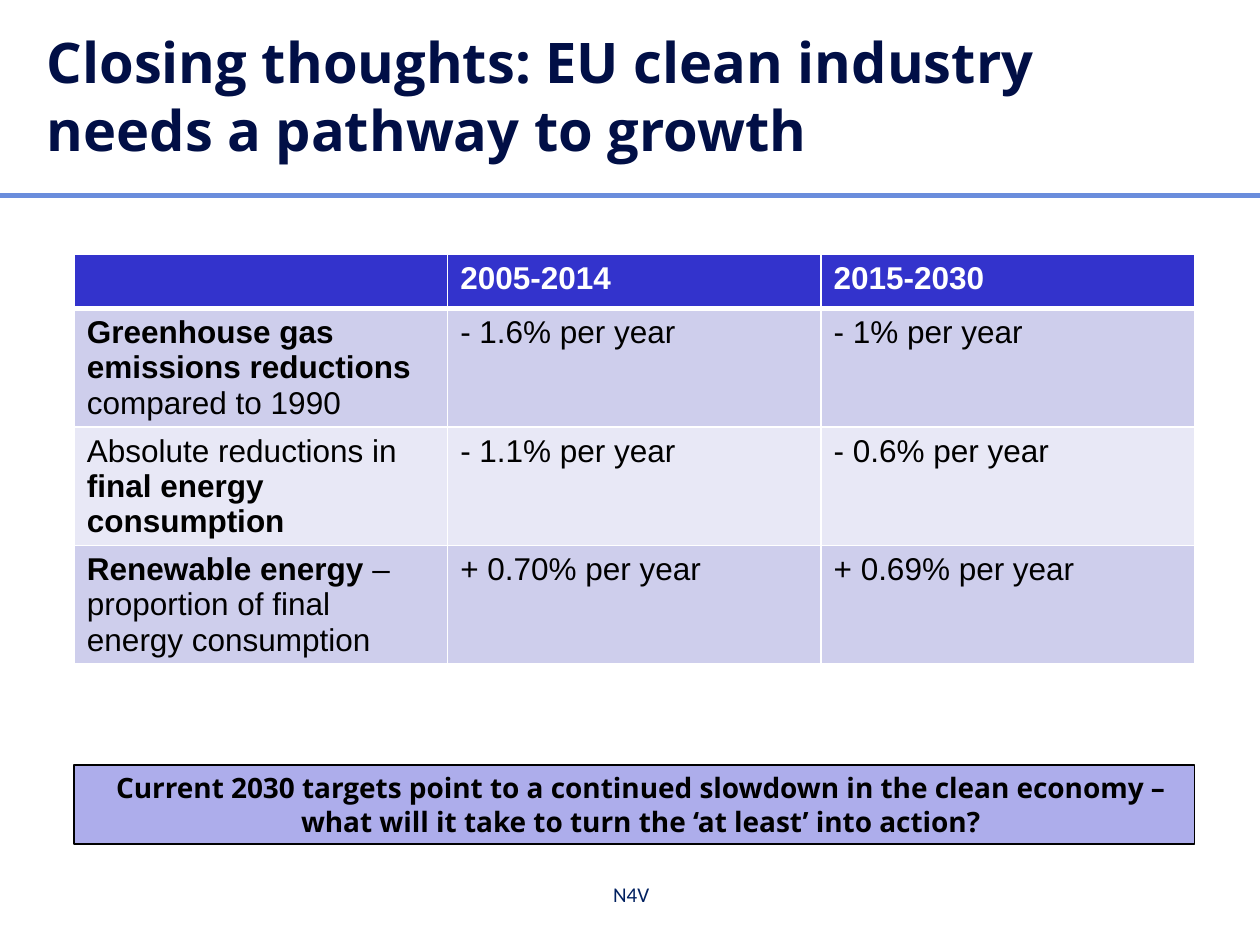
from dataclasses import dataclass

from lxml import etree
from pptx import Presentation
from pptx.dml.color import RGBColor
from pptx.enum.shapes import MSO_CONNECTOR, MSO_SHAPE
from pptx.enum.text import MSO_ANCHOR, MSO_AUTO_SIZE, PP_ALIGN
from pptx.oxml.ns import qn
from pptx.util import Inches, Pt

RECTANGLE = MSO_SHAPE.RECTANGLE
STRAIGHT = MSO_CONNECTOR.STRAIGHT
MIDDLE = MSO_ANCHOR.MIDDLE
LEFT, CENTER = PP_ALIGN.LEFT, PP_ALIGN.CENTER
NO_FIT = MSO_AUTO_SIZE.NONE
TITLE_ONLY = 5


@dataclass(frozen=True)
class Theme:
    heading_font: str = "Open Sans"
    table_font: str = "Arial"
    footer_font: str = "Calibri"
    title_size: int = 32
    table_size: int = 18
    callout_size: int = 16
    footer_size: int = 12
    title: str = "010F46"
    footer: str = "002060"
    rule: str = "6A8DDC"
    header: str = "3333CC"
    bands: tuple = ("CECEEC", "E8E8F6")
    callout: str = "ADADEB"
    dark: str = "000000"
    light: str = "FFFFFF"


class SlideBuilder:
    def __init__(self, slide, theme):
        self.slide = slide
        self.theme = theme

    def paint(self, fill, color):
        fill.solid()
        fill.fore_color.rgb = RGBColor.from_string(color)

    def set_text(self, frame, runs, font, size, color, bold=None, align=LEFT):
        frame.word_wrap = True
        paragraph = frame.paragraphs[0]
        paragraph.alignment = align
        paragraph.font.name = font
        paragraph.font.size = Pt(size)
        paragraph.font.bold = bold
        paragraph.font.color.rgb = RGBColor.from_string(color)
        for text, run_bold in runs:
            run = paragraph.add_run()
            run.text = text
            if run_bold != bold:
                run.font.bold = run_bold
        return paragraph

    def title(self, text, box):
        heading = self.slide.shapes.title
        heading.left, heading.top, heading.width, heading.height = map(Inches, box)
        frame = heading.text_frame
        frame.auto_size = NO_FIT
        frame.vertical_anchor = MIDDLE
        paragraph = self.set_text(frame, [(text, True)], self.theme.heading_font,
                                  self.theme.title_size, self.theme.title, True)
        paragraph.line_spacing = 1.01

    def rule(self, y, width, weight):
        divider = self.slide.shapes.add_connector(
            STRAIGHT, Inches(0), Inches(y), Inches(width), Inches(y))
        divider.line.color.rgb = RGBColor.from_string(self.theme.rule)
        divider.line.width = Pt(weight)
        etree.SubElement(divider._element.spPr, qn("a:effectLst"))

    def cell_borders(self, cell, top, bottom):
        properties = cell._tc.get_or_add_tcPr()
        weights = {"lnL": 1, "lnR": 1, "lnT": top, "lnB": bottom}
        for position, (side, weight) in enumerate(weights.items()):
            border = etree.Element(qn(f"a:{side}"), w=str(Pt(weight)))
            solid = etree.SubElement(border, qn("a:solidFill"))
            etree.SubElement(solid, qn("a:srgbClr"), val=self.theme.light)
            properties.insert(position, border)

    def table(self, rows, box, header_height, row_height):
        theme = self.theme
        grid = self.slide.shapes.add_table(
            len(rows), len(rows[0]), *map(Inches, box)).table
        for r, row in enumerate(rows):
            is_header = r == 0
            grid.rows[r].height = Inches(header_height if is_header else row_height)
            background = theme.header if is_header else theme.bands[(r - 1) % 2]
            color = theme.light if is_header else theme.dark
            for c, runs in enumerate(row):
                cell = grid.cell(r, c)
                self.paint(cell.fill, background)
                self.cell_borders(cell, 3 if r == 1 else 1, 3 if is_header else 1)
                agreed = runs[0][1] if len(runs) == 1 else None
                self.set_text(cell.text_frame, runs, theme.table_font,
                              theme.table_size, color, agreed)

    def callout(self, text, box):
        panel = self.slide.shapes.add_shape(RECTANGLE, *map(Inches, box))
        panel.shadow.inherit = False
        self.paint(panel.fill, self.theme.callout)
        panel.line.color.rgb = RGBColor.from_string(self.theme.dark)
        panel.line.width = Pt(1)
        frame = panel.text_frame
        frame.margin_left = Inches(0.2)
        frame.vertical_anchor = MIDDLE
        self.set_text(frame, [(text, True)], self.theme.heading_font,
                      self.theme.callout_size, self.theme.dark, True, CENTER)

    def footer(self, text, box):
        frame = self.slide.shapes.add_textbox(*map(Inches, box)).text_frame
        frame.vertical_anchor = MIDDLE
        self.set_text(frame, [(text, False)], self.theme.footer_font,
                      self.theme.footer_size, self.theme.footer, False, CENTER)


def plain(text):
    return [(text, False)]


def strong(text):
    return [(text, True)]


def main():
    deck = Presentation()
    deck.slide_width, deck.slide_height = Inches(10), Inches(7.5)
    builder = SlideBuilder(
        deck.slides.add_slide(deck.slide_layouts[TITLE_ONLY]), Theme())
    left, width = 0.59, 8.89
    trends = [
        [plain(""), strong("2005-2014"), strong("2015-2030")],
        [strong("Greenhouse gas emissions reductions ") + plain("compared to 1990"),
         plain("- 1.6% per year"), plain("- 1% per year")],
        [plain("Absolute reductions in ") + strong("final energy consumption"),
         plain("- 1.1% per year"), plain("- 0.6% per year")],
        [strong("Renewable energy ")
         + plain("– proportion of final energy consumption"),
         plain("+ 0.70% per year"), plain("+ 0.69% per year")],
    ]

    builder.rule(1.55, 10, 3)
    builder.title("Closing thoughts: EU clean industry needs a pathway to growth",
                  (0.27, 0.28, 8.5, 0.94))
    builder.table(trends, (left, 2.02, width, 3.25), 0.43, 0.94)
    builder.footer("N4V", (3.43, 6.9, 3.16, 0.39))
    builder.callout("Current 2030 targets point to a continued slowdown in the clean "
                    "economy – what will it take to turn the ‘at least’ into action?",
                    (left, 6.07, width, 0.63))
    deck.save("out.pptx")


if __name__ == "__main__":
    main()
